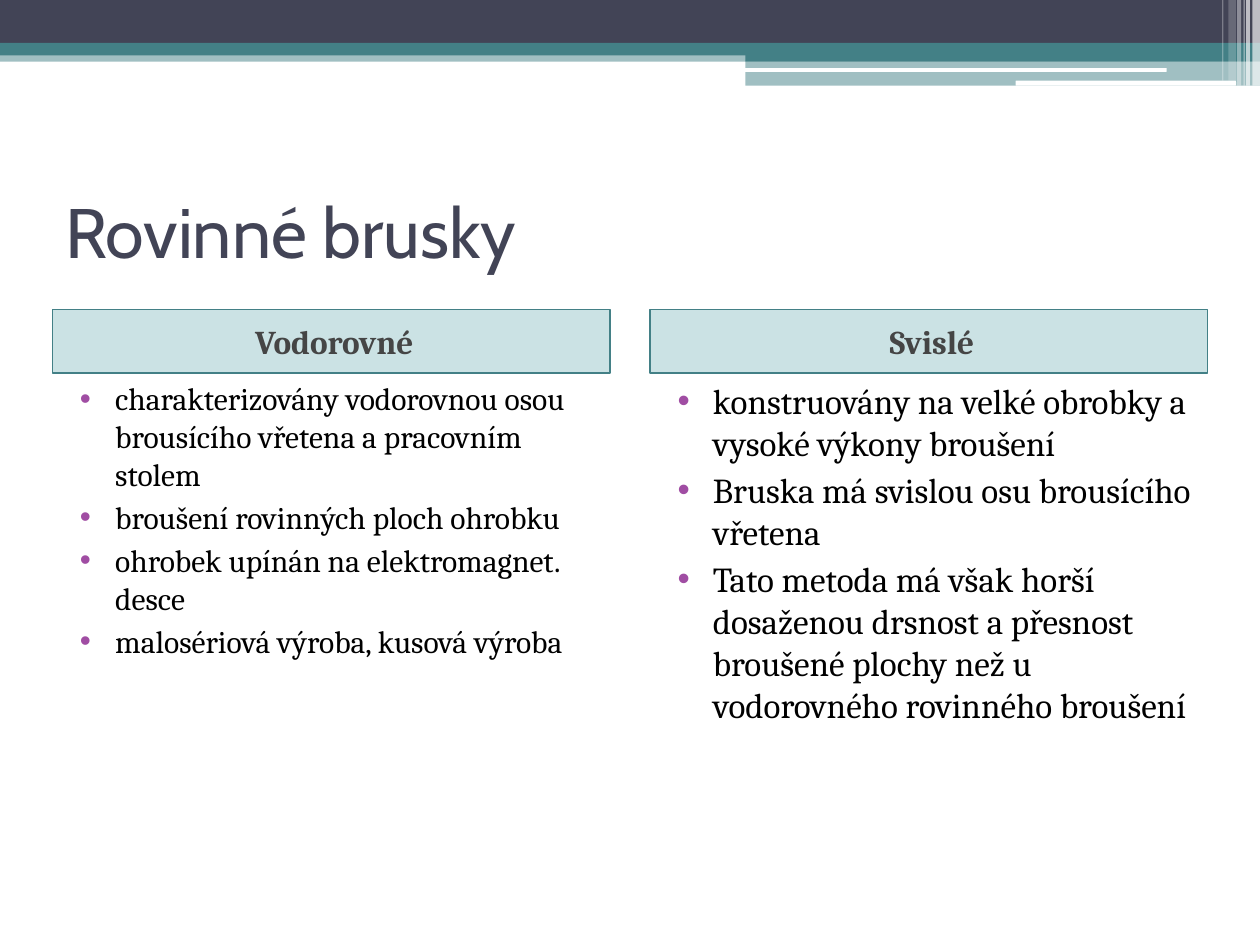
from lxml.etree import SubElement
from pptx import Presentation
from pptx.dml.color import RGBColor
from pptx.enum.shapes import MSO_SHAPE as Shape
from pptx.enum.text import MSO_ANCHOR as Anchor, MSO_AUTO_SIZE as AutoSize, PP_ALIGN as Align
from pptx.oxml.ns import qn
from pptx.util import Pt

DARK, TEAL, WHITE = "424456", "438086", "FFFFFF"

# left, top, width, height, colour, opacity in percent
BANDS = [
    (0, 28.8, 720, 6.5, TEAL, 50),
    (0, 0, 720, 24.5, DARK, 100),
    (0, 24.5, 720, 7.2, TEAL, 100),
    (426, 28.1, 294, 7, TEAL, 100),
    (426, 34.6, 294, 14.4, TEAL, 50),
]
ROUNDED_LINES = [(425.5, 38.9, 241.2, 2.2), (580.3, 46.1, 126, 2.9)]
# left, width, height, opacity in percent
STRIPES = [
    (715.7, 4.3, 49, 65),
    (712.1, 2.2, 49, 65),
    (710.6, 0.7, 49, 60),
    (707, 2.2, 49, 40),
    (702, 4.3, 46.1, 20),
    (698.4, 0.7, 46.1, 30),
]

COLUMN_LEFT, COLUMN_WIDTH, COLUMN_STEP = 30, 318.5, 341.5
HEADER_TOP, HEADER_HEIGHT, LIST_HEIGHT = 176.9, 36.3, 306
COLUMNS = [
    ("Vodorovné", 18, [
        "charakterizovány vodorovnou osou brousícího vřetena a pracovním stolem",
        "broušení rovinných ploch ohrobku",
        "ohrobek upínán na elektromagnet. desce",
        "malosériová výroba, kusová výroba",
    ]),
    ("Svislé", 20, [
        "konstruovány na velké obrobky a vysoké výkony broušení",
        "Bruska má svislou osu brousícího vřetena",
        "Tato metoda má však horší dosaženou drsnost a přesnost broušené plochy "
        "než u vodorovného rovinného broušení",
    ]),
]


def color(value):
    return RGBColor.from_string(value)


def set_values(target, values):
    for name, value in values.items():
        setattr(target, name, value)


class Painter:
    title_font, body_font = "Cabin", "Cambria"
    header_color, body_color, bullet_color = "454545", "000000", "A04DA3"
    header_fill = "328E97"

    def __init__(self, page):
        self.page = page

    def add_span(self, para, text, font, size, ink, bold=False):
        span = para.add_run()
        span.text = text
        set_values(span.font, {"name": font, "size": Pt(size), "bold": bold})
        span.font.color.rgb = color(ink)

    def indent(self, para, left, first=0):
        properties = para._p.get_or_add_pPr()
        properties.set("marL", str(Pt(left)))
        properties.set("indent", str(Pt(first)))
        para.space_before = Pt(3)
        return properties

    def block(self, left, top, width, height, fill, opacity=100, kind=Shape.RECTANGLE):
        box = self.page.shapes.add_shape(kind, Pt(left), Pt(top), Pt(width), Pt(height))
        box.shadow.inherit = False
        box.fill.solid()
        box.fill.fore_color.rgb = color(fill)
        box.line.fill.background()
        if opacity < 100:
            tint = box.fill._xPr.find(qn("a:solidFill"))[0]
            SubElement(tint, qn("a:alpha"), val=str(opacity * 1000))
        return box

    def title(self, text, left, top, width, height):
        box = self.page.shapes.title
        set_values(box, {"left": Pt(left), "top": Pt(top), "width": Pt(width), "height": Pt(height)})
        set_values(box.text_frame, {"auto_size": AutoSize.NONE, "word_wrap": True,
                                    "vertical_anchor": Anchor.MIDDLE})
        para = box.text_frame.paragraphs[0]
        para.alignment = Align.LEFT
        self.add_span(para, text, self.title_font, 40, DARK)

    def header(self, text, left, top, width, height):
        box = self.block(left, top, width, height, self.header_fill, 25)
        box.line.color.rgb = color(TEAL)
        box.line.width = Pt(1)
        box.text_frame.vertical_anchor = Anchor.MIDDLE
        para = box.text_frame.paragraphs[0]
        para.alignment = Align.CENTER
        self.indent(para, 3.6)
        self.add_span(para, text, self.body_font, 19, self.header_color, bold=True)

    def bullets(self, items, size, left, top, width, height):
        box = self.page.shapes.add_textbox(Pt(left), Pt(top), Pt(width), Pt(height))
        frame = box.text_frame
        frame.word_wrap = True
        for index, item in enumerate(items):
            para = frame.add_paragraph() if index else frame.paragraphs[0]
            properties = self.indent(para, 28.8, -20.2)
            tint = SubElement(properties, qn("a:buClr"))
            SubElement(tint, qn("a:srgbClr"), val=self.bullet_color)
            SubElement(properties, qn("a:buFont"), typeface="Arial")
            SubElement(properties, qn("a:buChar"), char="•")
            self.add_span(para, item, self.body_font, size, self.body_color)


def main():
    deck = Presentation()
    set_values(deck, {"slide_width": Pt(720), "slide_height": Pt(540)})
    painter = Painter(deck.slides.add_slide(deck.slide_layouts[5]))

    for band in BANDS:
        painter.block(*band)
    for line in ROUNDED_LINES:
        painter.block(*line, WHITE, kind=Shape.ROUNDED_RECTANGLE)
    for left, width, height, opacity in STRIPES:
        painter.block(left, 0, width, height, WHITE, opacity)

    painter.title("Rovinné brusky", COLUMN_LEFT, 90, 660, 84)
    for index, (heading, size, items) in enumerate(COLUMNS):
        left = COLUMN_LEFT + index * COLUMN_STEP
        painter.header(heading, left, HEADER_TOP, COLUMN_WIDTH, HEADER_HEIGHT)
        painter.bullets(items, size, left, HEADER_TOP + HEADER_HEIGHT, COLUMN_WIDTH, LIST_HEIGHT)

    deck.save("out.pptx")


if __name__ == "__main__":
    main()
